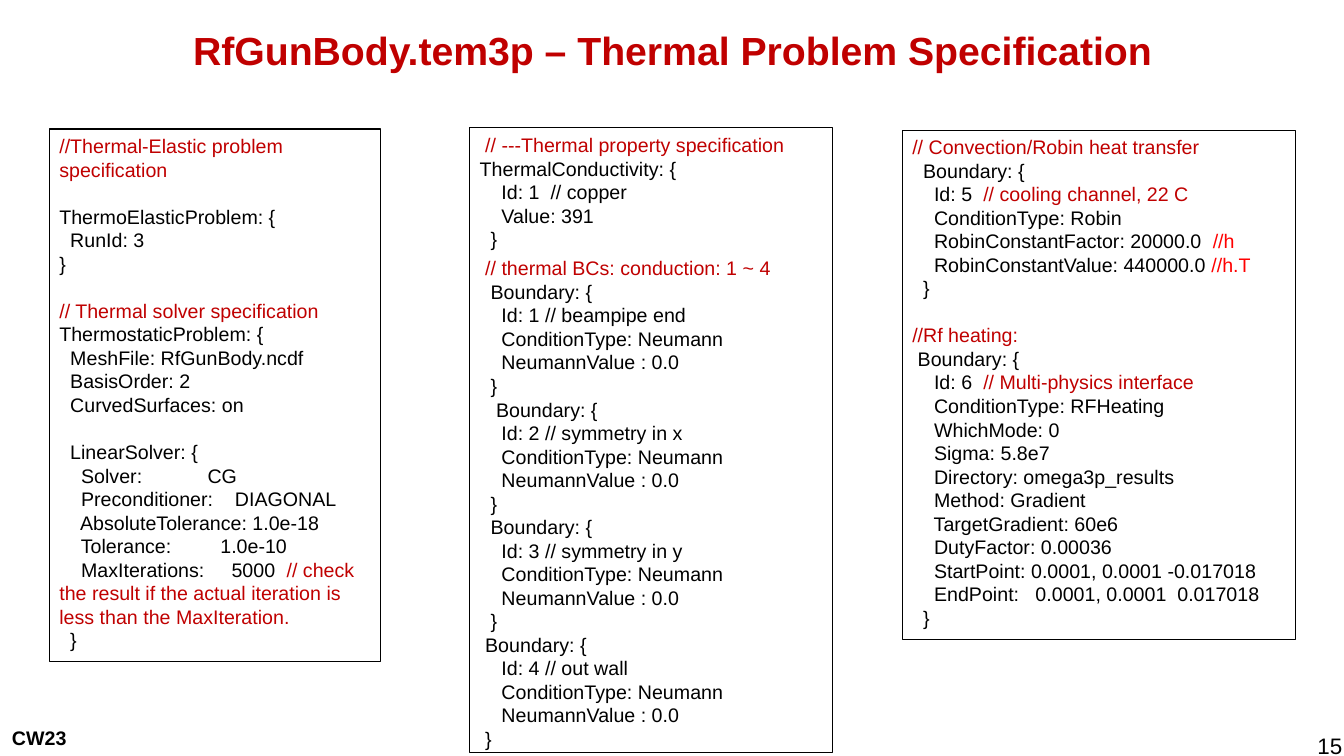
from pptx import Presentation
from pptx.dml.color import RGBColor
from pptx.enum.shapes import MSO_SHAPE
from pptx.enum.text import MSO_ANCHOR, PP_ALIGN
from pptx.util import Inches, Pt

RECTANGLE = MSO_SHAPE.RECTANGLE
TOP, MIDDLE = MSO_ANCHOR.TOP, MSO_ANCHOR.MIDDLE
LEFT, CENTER, RIGHT = PP_ALIGN.LEFT, PP_ALIGN.CENTER, PP_ALIGN.RIGHT
BLACK = RGBColor(0, 0, 0)
DARK_RED = RGBColor(0xC0, 0, 0)
RED = RGBColor(0xFF, 0, 0)
SPAN_COLORS = (BLACK, DARK_RED, BLACK, RED)

SOLVER = """|//Thermal-Elastic problem specification

ThermoElasticProblem: {
  RunId: 3
}

|// Thermal solver specification
ThermostaticProblem: {
  MeshFile: RfGunBody.ncdf
  BasisOrder: 2
  CurvedSurfaces: on

  LinearSolver: {
    Solver:            CG
    Preconditioner:    DIAGONAL
    AbsoluteTolerance: 1.0e-18
    Tolerance:         1.0e-10
    MaxIterations:     5000  |// check the result if the actual iteration is less than the MaxIteration.
  }"""

CONDUCTION = """ |// ---Thermal property specification  |ThermalConductivity: {
    Id: 1  // copper
    Value: 391
  }

 |// thermal BCs: conduction: 1 ~ 4
  Boundary: {
    Id: 1 // beampipe end
    ConditionType: Neumann
    NeumannValue : 0.0
  }
   Boundary: {
    Id: 2 // symmetry in x
    ConditionType: Neumann
    NeumannValue : 0.0
  }
  Boundary: {
    Id: 3 // symmetry in y
    ConditionType: Neumann
    NeumannValue : 0.0
  }
 Boundary: {
    Id: 4 // out wall
    ConditionType: Neumann
    NeumannValue : 0.0
 }"""

HEATING = """|// Convection/Robin heat transfer
  Boundary: {
    Id: 5  |// cooling channel, 22 C
    ConditionType: Robin
    RobinConstantFactor: 20000.0  |||//h
    RobinConstantValue: 440000.0 |||//h.T
  }

|//Rf heating:
 Boundary: {
    Id: 6  |// Multi-physics interface
    ConditionType: RFHeating
    WhichMode: 0
    Sigma: 5.8e7
    Directory: omega3p_results
    Method: Gradient
    TargetGradient: 60e6
    DutyFactor: 0.00036
    StartPoint: 0.0001, 0.0001 -0.017018
    EndPoint:   0.0001, 0.0001  0.017018
  }"""


class SlideWriter:
    """Draws styled labels and code listings on one slide."""

    def __init__(self, page, font="Arial", code_size=14):
        self.page = page
        self.font = font
        self.code_size = code_size

    def add_span(self, para, text, color, size, bold=False):
        span = para.add_run()
        span.text = text
        span.font.color.rgb = color
        style = {"name": self.font, "size": Pt(size), "bold": bold}
        for key, value in style.items():
            setattr(span.font, key, value)

    def add_label(self, text, place, size, color=BLACK, bold=False, align=LEFT, anchor=TOP):
        box = self.page.shapes.add_textbox(*map(Inches, place))
        box.text_frame.word_wrap = True
        box.text_frame.vertical_anchor = anchor
        para = box.text_frame.paragraphs[0]
        para.alignment = align
        self.add_span(para, text, color, size, bold)

    def add_listing(self, code, place, gap):
        box = self.page.shapes.add_shape(RECTANGLE, *map(Inches, place))
        box.shadow.inherit = False
        box.fill.background()
        box.line.color.rgb = BLACK
        box.line.width = Pt(0.75)
        frame = box.text_frame
        frame.word_wrap = True
        frame.vertical_anchor = TOP
        para = frame.paragraphs[0]
        for block_number, block in enumerate(code.split("\n\n")):
            for line_number, line in enumerate(block.split("\n")):
                if block_number or line_number:
                    para = frame.add_paragraph()
                if block_number and not line_number:
                    para.space_before = Pt(gap)
                para.alignment = LEFT
                for text, color in zip(line.split("|"), SPAN_COLORS):
                    if text:
                        self.add_span(para, text, color, self.code_size)


def main():
    deck = Presentation()
    deck.slide_width, deck.slide_height = Inches(13.33), Inches(7.5)
    writer = SlideWriter(deck.slides.add_slide(deck.slide_layouts[6]))
    writer.add_label("CW23", (0.02, 7.15, 1.81, 0.34), 14, bold=True)
    writer.add_label("RfGunBody.tem3p – Thermal Problem Specification",
                     (1.67, 0.03, 10, 0.93), 28, DARK_RED, True, CENTER, MIDDLE)
    writer.add_listing(SOLVER, (0.49, 1.28, 3.28, 5.28), 16.8)
    writer.add_listing(CONDUCTION, (4.66, 1.27, 3.6, 6.2), 4)
    writer.add_listing(HEATING, (8.95, 1.29, 3.9, 5.05), 16.8)
    writer.add_label("15", (12.47, 7.21, 0.94, 0.29), 16, align=RIGHT)
    deck.save("out.pptx")


if __name__ == "__main__":
    main()
